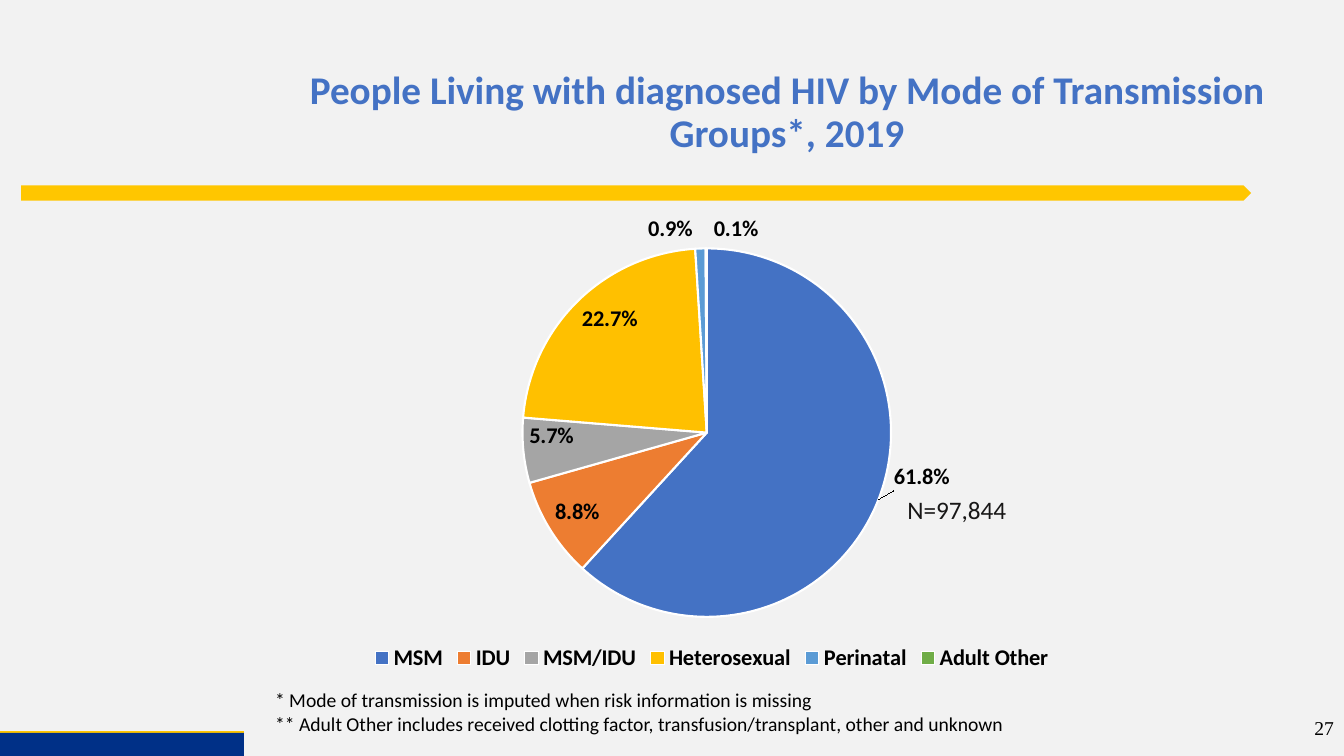
from dataclasses import dataclass

from lxml.etree import SubElement
from pptx import Presentation
from pptx.chart.data import CategoryChartData
from pptx.dml.color import RGBColor
from pptx.enum.chart import XL_CHART_TYPE, XL_LABEL_POSITION, XL_LEGEND_POSITION
from pptx.enum.shapes import MSO_CONNECTOR, MSO_SHAPE
from pptx.enum.text import MSO_ANCHOR, PP_ALIGN
from pptx.oxml import parse_xml
from pptx.oxml.ns import nsdecls, qn
from pptx.slide import Slide
from pptx.text.text import Font
from pptx.util import Inches, Pt

BACKGROUND = RGBColor(0xF2, 0xF2, 0xF2)
GOLD = RGBColor(0xFF, 0xC6, 0x00)
NAVY = RGBColor(0x00, 0x30, 0x87)
BLUE = RGBColor(0x44, 0x72, 0xC4)
ORANGE = RGBColor(0xED, 0x7D, 0x31)
GRAY = RGBColor(0xA5, 0xA5, 0xA5)
AMBER = RGBColor(0xFF, 0xC0, 0x00)
SKY = RGBColor(0x5B, 0x9B, 0xD5)
GREEN = RGBColor(0x70, 0xAD, 0x47)
BLACK = RGBColor(0x00, 0x00, 0x00)
INK = RGBColor(0x18, 0x17, 0x17)
WHITE = RGBColor(0xFF, 0xFF, 0xFF)


@dataclass(frozen=True)
class Box:
    left: float
    top: float
    width: float
    height: float

    def inches(self) -> tuple[Inches, Inches, Inches, Inches]:
        return Inches(self.left), Inches(self.top), Inches(self.width), Inches(self.height)


@dataclass(frozen=True)
class Group:
    name: str
    share: float
    color: RGBColor
    position: XL_LABEL_POSITION = XL_LABEL_POSITION.INSIDE_END
    shift: tuple[float, float] | None = None


@dataclass(frozen=True)
class Bar:
    preset: MSO_SHAPE
    box: Box
    color: RGBColor


@dataclass(frozen=True)
class Note:
    box: Box
    lines: tuple[str, ...]
    size: int
    color: RGBColor = BLACK
    family: str = "Calibri"
    align: PP_ALIGN = PP_ALIGN.LEFT
    anchor: MSO_ANCHOR = MSO_ANCHOR.TOP
    wrap: bool = True


OUTSIDE = XL_LABEL_POSITION.OUTSIDE_END
GROUPS = (
    Group("MSM", 0.618, BLUE, OUTSIDE, (0.01, -0.08)),
    Group("IDU", 0.088, ORANGE),
    Group("MSM/IDU", 0.057, GRAY),
    Group("Heterosexual", 0.227, AMBER),
    Group("Perinatal", 0.009, SKY, OUTSIDE, (-0.03, 0)),
    Group("Adult Other", 0.001, GREEN, OUTSIDE, (0.03, 0)),
)
TITLE = "People Living with diagnosed HIV by Mode of Transmission Groups*, 2019"
TITLE_BOX = Box(2.63, 0.4, 10.35, 1.45)
CHART_BOX = Box(2.12, 1.97, 9.88, 4.74)
PIE_AREA = Box(0.31, 0.1, 0.37, 0.78)
TITLE_RULE = Bar(MSO_SHAPE.PENTAGON, Box(0.21, 1.84, 12.2, 0.15), GOLD)
FOOTER_BLOCK = Bar(MSO_SHAPE.RECTANGLE, Box(0, 7.27, 2.42, 0.23), NAVY)
NOTES = (
    Note(Box(10.33, 7.02, 3, 0.4), ("27",), 14, family="Times New Roman",
         align=PP_ALIGN.RIGHT, anchor=MSO_ANCHOR.MIDDLE),
    Note(Box(2.63, 6.78, 8.87, 0.81), (
        "* Mode of transmission is imputed when risk information is missing",
        "** Adult Other includes received clotting factor, transfusion/transplant, other and unknown",
    ), 14),
    Note(Box(8.9, 4.86, 1.19, 0.4), ("N=97,844",), 18, INK, wrap=False),
)


def style(font: Font, size: int, color: RGBColor, bold: bool = False, family: str = "Calibri") -> None:
    font.name, font.size, font.bold = family, Pt(size), bold
    font.color.rgb = color


def add_bar(slide: Slide, bar: Bar) -> None:
    shape = slide.shapes.add_shape(bar.preset, *bar.box.inches())
    shape.shadow.inherit = False
    shape.fill.solid()
    shape.fill.fore_color.rgb = bar.color
    shape.line.fill.background()


def add_footer_line(slide: Slide) -> None:
    box = FOOTER_BLOCK.box
    edge = slide.shapes.add_connector(
        MSO_CONNECTOR.STRAIGHT, Inches(box.left), Inches(box.top),
        Inches(box.left + box.width), Inches(box.top))
    edge.line.color.rgb = GOLD
    edge.line.width = Pt(3)
    SubElement(edge._element.spPr, qn("a:effectLst"))


def add_title(slide: Slide) -> None:
    title = slide.shapes.title
    title.left, title.top, title.width, title.height = TITLE_BOX.inches()
    frame = title.text_frame
    frame.word_wrap = True
    frame.vertical_anchor = MSO_ANCHOR.MIDDLE
    heading = frame.paragraphs[0]
    heading.alignment = PP_ALIGN.CENTER
    heading.line_spacing = 0.9
    run = heading.add_run()
    run.text = TITLE
    style(run.font, 28, BLUE, bold=True)


def add_note(slide: Slide, note: Note) -> None:
    frame = slide.shapes.add_textbox(*note.box.inches()).text_frame
    frame.word_wrap = note.wrap
    frame.vertical_anchor = note.anchor
    for index, line in enumerate(note.lines):
        paragraph = frame.add_paragraph() if index else frame.paragraphs[0]
        paragraph.alignment = note.align
        run = paragraph.add_run()
        run.text = line
        style(run.font, note.size, note.color, family=note.family)


def add_pie(slide: Slide) -> None:
    data = CategoryChartData(number_format="0.0%")
    data.categories = [group.name for group in GROUPS]
    data.add_series("Series 1", [group.share for group in GROUPS])
    chart = slide.shapes.add_chart(XL_CHART_TYPE.PIE, *CHART_BOX.inches(), data).chart
    style(chart.font, 10, BLACK)
    chart.has_title = False
    chart.has_legend = True
    chart.legend.position = XL_LEGEND_POSITION.BOTTOM
    chart.legend.include_in_layout = False
    style(chart.legend.font, 16, BLACK, bold=True)

    plot = chart.plots[0]
    plot.vary_by_categories = True
    shares = plot.series[0]
    labels = shares.data_labels
    labels.show_value = True
    labels.number_format = "0.0%"
    labels.number_format_is_linked = False
    style(labels.font, 16, BLACK, bold=True)
    for index, group in enumerate(GROUPS):
        point = shares.points[index]
        point.format.fill.solid()
        point.format.fill.fore_color.rgb = group.color
        point.format.line.color.rgb = WHITE
        point.format.line.width = Pt(1.5)
        style(point.data_label.font, 16, BLACK, bold=True)
        point.data_label.position = group.position
        if group.shift:
            x, y = group.shift
            labels._element.findall(qn("c:dLbl"))[index].insert(1, parse_xml(
                f'<c:layout {nsdecls("c")}><c:manualLayout>'
                f'<c:x val="{x}"/><c:y val="{y}"/></c:manualLayout></c:layout>'))

    plot_area = chart._chartSpace.chart.plotArea
    for old_layout in plot_area.findall(qn("c:layout")):
        plot_area.remove(old_layout)
    plot_area.insert(0, parse_xml(
        f'<c:layout {nsdecls("c")}><c:manualLayout><c:layoutTarget val="inner"/>'
        '<c:xMode val="edge"/><c:yMode val="edge"/>'
        f'<c:x val="{PIE_AREA.left}"/><c:y val="{PIE_AREA.top}"/>'
        f'<c:w val="{PIE_AREA.width}"/><c:h val="{PIE_AREA.height}"/>'
        '</c:manualLayout></c:layout>'))


def main() -> None:
    """Build the HIV transmission mode slide."""
    deck = Presentation()
    deck.slide_width, deck.slide_height = Inches(13.33), Inches(7.5)
    slide = deck.slides.add_slide(deck.slide_layouts[5])
    slide.background.fill.solid()
    slide.background.fill.fore_color.rgb = BACKGROUND
    add_bar(slide, TITLE_RULE)
    add_footer_line(slide)
    add_bar(slide, FOOTER_BLOCK)
    add_title(slide)
    add_pie(slide)
    for note in NOTES:
        add_note(slide, note)
    deck.save("out.pptx")


if __name__ == "__main__":
    main()
